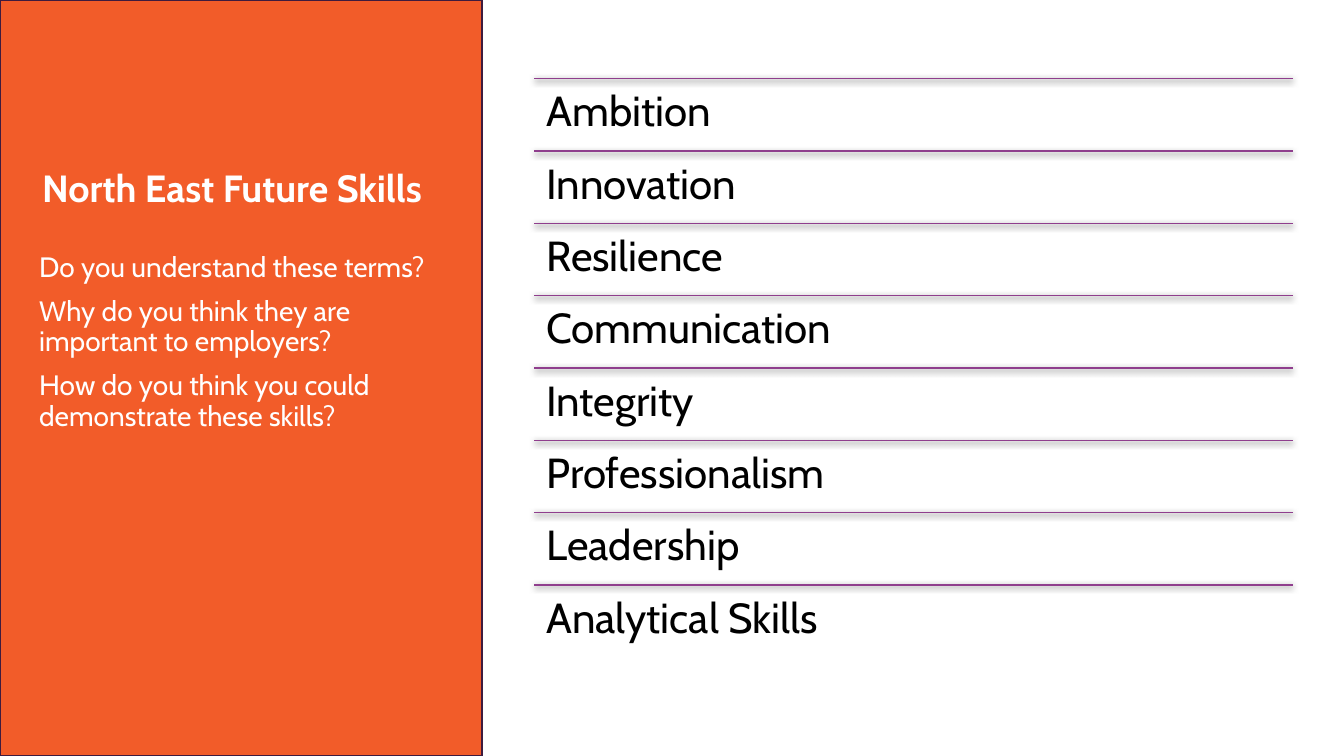
from lxml import etree
from pptx import Presentation
from pptx.dml.color import RGBColor
from pptx.enum.shapes import MSO_CONNECTOR, MSO_SHAPE
from pptx.enum.text import MSO_ANCHOR
from pptx.oxml import parse_xml
from pptx.oxml.ns import nsdecls
from pptx.util import Inches, Pt

RECT = MSO_SHAPE.RECTANGLE
LINE = MSO_CONNECTOR.STRAIGHT
TOP = MSO_ANCHOR.TOP
MIDDLE = MSO_ANCHOR.MIDDLE
ORANGE = RGBColor(0xF2, 0x5C, 0x29)
PLUM = RGBColor(0x3F, 0x1B, 0x3E)
PURPLE = RGBColor(0x8F, 0x3E, 0x8D)
WHITE = RGBColor(0xFF, 0xFF, 0xFF)
BLACK = RGBColor(0, 0, 0)
FONT = "Cabin"

TITLE = "North East Future Skills"
ASKS = [
    "Do you understand these terms?",
    "Why do you think they are important to employers?",
    "How do you think you could demonstrate these skills?",
]
SKILLS = [
    "Ambition", "Innovation", "Resilience", "Communication",
    "Integrity", "Professionalism", "Leadership", "Analytical Skills",
]


def add_text(slide, box, lines, size, color, bold=False, anchor=TOP,
             pad=(0.1, 0.05), gap=0):
    frame = slide.shapes.add_textbox(*map(Inches, box)).text_frame
    frame.word_wrap = True
    frame.vertical_anchor = anchor
    frame.margin_left = frame.margin_right = Inches(pad[0])
    frame.margin_top = frame.margin_bottom = Inches(pad[1])
    frame.text = "\n".join(lines)
    for i, para in enumerate(frame.paragraphs):
        para.line_spacing = 0.9
        para.space_before = Pt(gap if i else 0)
        for run in para.runs:
            run.font.name = FONT
            run.font.size = Pt(size)
            run.font.bold = bold
            run.font.color.rgb = color


def add_rule(slide, left, top, width):
    rule = slide.shapes.add_connector(
        LINE, Inches(left), Inches(top), Inches(left + width), Inches(top))
    rule.line.color.rgb = PURPLE
    rule.line.width = Pt(1)
    effects = parse_xml(f"<a:effectLst {nsdecls('a')}/>")
    tag = "{" + effects.nsmap["a"] + "}"
    shadow = etree.SubElement(
        effects, tag + "outerShdw", blurRad=str(Pt(4.5)),
        dist=str(Pt(1.5)), dir="5400000", rotWithShape="0")
    color = etree.SubElement(shadow, tag + "srgbClr", val=str(BLACK))
    etree.SubElement(color, tag + "alpha", val="63000")
    rule.line._get_or_add_ln().addnext(effects)


def add_panel(slide, left, top, width, height):
    panel = slide.shapes.add_shape(
        RECT, *map(Inches, (left, top, width, height)))
    panel.shadow.inherit = False
    panel.fill.solid()
    panel.fill.fore_color.rgb = ORANGE
    panel.line.color.rgb = PLUM
    panel.line.width = Pt(1.5)
    add_text(slide, (left + 0.32, top + 1.53, 4.11, 0.72), [TITLE],
             27, WHITE, bold=True, anchor=MIDDLE)
    add_text(slide, (left + 0.29, top + 2.46, 4.11, 1.95), ASKS,
             20, WHITE, gap=10)


def add_skills(slide, left, top, width, height):
    pitch = height / len(SKILLS)
    for i, skill in enumerate(SKILLS):
        y = top + i * pitch
        add_rule(slide, left, y, width)
        add_text(slide, (left, y, width, pitch), [skill],
                 30, BLACK, pad=(0.12, 0.12))


def main():
    deck = Presentation()
    deck.slide_width = Inches(13.33)
    deck.slide_height = Inches(7.5)
    slide = deck.slides.add_slide(deck.slide_layouts[6])
    add_panel(slide, 0, 0, 4.78, 7.5)
    add_skills(slide, 5.3, 0.78, 7.52, 5.74)
    deck.save("out.pptx")


if __name__ == "__main__":
    main()
